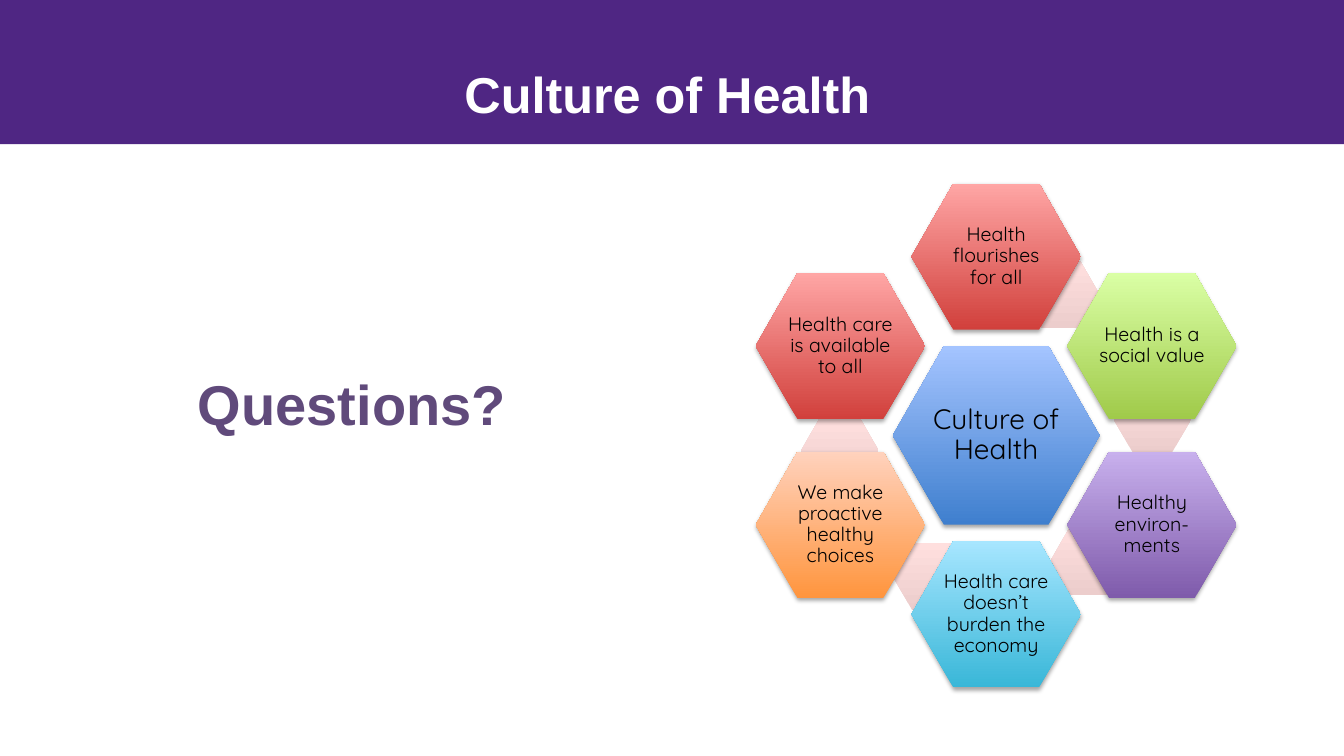
from lxml.etree import SubElement
from pptx import Presentation
from pptx.dml.color import RGBColor
from pptx.enum.shapes import MSO_SHAPE
from pptx.enum.text import MSO_ANCHOR, PP_ALIGN
from pptx.oxml.ns import qn
from pptx.util import Inches, Pt

# Content
TITLE = "Culture of Health"
PROMPT = "Questions?"
HUB = ("Culture of Health", "3F7FCE", "A4C4FF")
# Text, bottom colour, top colour, column and half-row on the ring,
# offset of the pale link from the hub (None: no link)
PETALS = [
    ("Health flourishes for all", "D1403C", "FFA6A5", 0, -2, (0.64, -1.4)),
    ("Health is a social value", "A0CA4A", "DAFFA5", 1, -1, (1.55, -0.16)),
    ("Healthy environ-ments", "7F5BAB", "C8B0ED", 1, 1, (0.92, 1.25)),
    ("Health care doesn’t burden the economy", "39B7D8", "A7E6FF", 0, 2, (-0.64, 1.4)),
    ("We make proactive healthy choices", "FF953E", "FFD2BD", -1, 1, (-1.55, 0.15)),
    ("Health care is available to all", "D1403C", "FFA6A5", -1, -1, None),
]
LINK_COLOURS = ("ECCDCC", "FFDFDE")

# Geometry in inches
CENTRE_X, CENTRE_Y = 9.88, 4.32
COLUMN_STEP, HALF_ROW = 1.545, 0.887
HUB_SIZE, HUB_TEXT_SIZE = (2.05, 1.77), (1.37, 1.19)
PETAL_SIZE, PETAL_TEXT_SIZE = (1.68, 1.45), (1.12, 0.97)
LINK_SIZE = (0.77, 0.67)

prs = Presentation()
prs.slide_width, prs.slide_height = Inches(13.33), Inches(7.5)
slide = prs.slides.add_slide(prs.slide_layouts[6])


def colour(value):
    return RGBColor.from_string(value)


def centred_box(x, y, size):
    width, height = size
    return [Inches(v) for v in (x - width / 2, y - height / 2, width, height)]


def add_text(box, text, size, font, ink, bold=False, inset=None):
    label = slide.shapes.add_textbox(*box)
    frame = label.text_frame
    frame.word_wrap = True
    frame.vertical_anchor = MSO_ANCHOR.MIDDLE
    if inset is not None:
        frame.margin_left = frame.margin_right = Inches(inset)
        frame.margin_top = frame.margin_bottom = Inches(inset)
    paragraph = frame.paragraphs[0]
    paragraph.text = text
    paragraph.alignment = PP_ALIGN.CENTER
    paragraph.font.size = Pt(size)
    paragraph.font.name = font
    paragraph.font.bold = bold
    paragraph.font.color.rgb = colour(ink)
    return paragraph


def add_hexagon(x, y, size, bottom, top, adjust=0.286, shadow=True):
    hexagon = slide.shapes.add_shape(MSO_SHAPE.HEXAGON, *centred_box(x, y, size))
    hexagon.adjustments[0] = adjust
    hexagon.line.fill.background()
    hexagon.fill.gradient()
    hexagon.fill.gradient_angle = 90
    for stop, value, position in zip(hexagon.fill.gradient_stops, (bottom, top), (0, 1)):
        stop.color.rgb = colour(value)
        stop.position = position
    hexagon.shadow.inherit = False
    if shadow:
        effects = hexagon.element.spPr.find(qn("a:effectLst"))
        outer = SubElement(effects, qn("a:outerShdw"), blurRad=str(Pt(3.1)),
                           dist=str(Pt(1.8)), dir="5400000", rotWithShape="0")
        black = SubElement(outer, qn("a:srgbClr"), val="000000")
        SubElement(black, qn("a:alpha"), val="35000")


def add_cell(x, y, size, text_size, text, bottom, top, points, inset):
    add_hexagon(x, y, size, bottom, top)
    paragraph = add_text(centred_box(x, y, text_size), text, points,
                         "Quicksand", "000000", inset=inset)
    paragraph.line_spacing = 0.9


# Title band
band = slide.shapes.add_shape(MSO_SHAPE.RECTANGLE, 0, 0, prs.slide_width, Inches(1.43))
band.fill.solid()
band.fill.fore_color.rgb = colour("4F2683")
band.line.fill.background()
band.shadow.inherit = False
add_text([Inches(v) for v in (0.67, 0.53, 11.9, 0.79)], TITLE, 36, "Arial", "FFFFFF", True)

# Prompt on the left
add_text([Inches(v) for v in (0.36, 3.64, 6.26, 0.72)], PROMPT, 40, "Arial", "604A7B", True)

# Hub, then the ring with its links
add_cell(CENTRE_X, CENTRE_Y, HUB_SIZE, HUB_TEXT_SIZE, *HUB, 20, 0.03)
for text, bottom, top, column, half_row, link in PETALS:
    if link:
        add_hexagon(CENTRE_X + link[0], CENTRE_Y + link[1], LINK_SIZE,
                    *LINK_COLOURS, adjust=0.289, shadow=False)
    add_cell(CENTRE_X + column * COLUMN_STEP, CENTRE_Y + half_row * HALF_ROW,
             PETAL_SIZE, PETAL_TEXT_SIZE, text, bottom, top, 14, 0.02)

prs.save("out.pptx")
